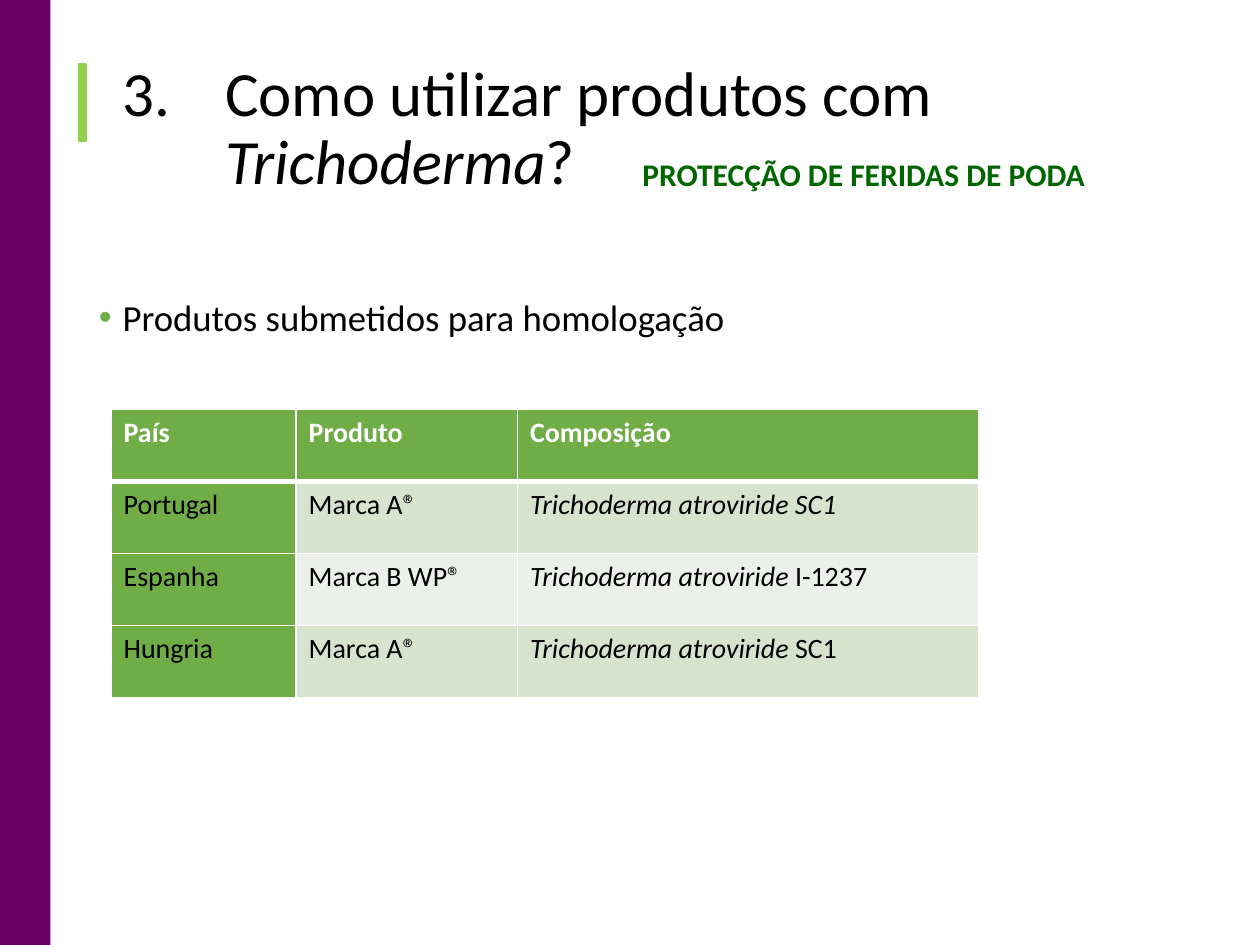
import pptx
import pptx.util
import pptx.dml.color
import pptx.enum.shapes
import pptx.enum.text
import pptx.oxml
import pptx.oxml.ns

Pt = pptx.util.Pt
RGBColor = pptx.dml.color.RGBColor
Anchor = pptx.enum.text.MSO_ANCHOR

PURPLE = RGBColor(0x66, 0x00, 0x66)
LIME = RGBColor(0x92, 0xD0, 0x50)
GREEN = RGBColor(0x70, 0xAD, 0x47)
DARK_GREEN = RGBColor(0x00, 0x66, 0x00)
BAND_DARK = RGBColor(0xD5, 0xE3, 0xCF)
BAND_LIGHT = RGBColor(0xEB, 0xF1, 0xE9)
WHITE = RGBColor(0xFF, 0xFF, 0xFF)
BLACK = RGBColor(0x00, 0x00, 0x00)


def add_xml(parent, tag, content="", **attributes):
    """Append a DrawingML element with the given attributes and inner XML."""
    listed = "".join(f' {name}="{value}"' for name, value in attributes.items())
    namespace = pptx.oxml.ns.nsdecls("a")
    parent.append(pptx.oxml.parse_xml(f"<a:{tag} {namespace}{listed}>{content}</a:{tag}>"))


class SlideBuilder:
    font_name = "Calibri"

    def __init__(self, slide):
        self.slide = slide

    def bar(self, left, top, width, height, color, line_width=0):
        shape = self.slide.shapes.add_shape(
            pptx.enum.shapes.MSO_SHAPE.RECTANGLE, Pt(left), Pt(top), Pt(width), Pt(height))
        shape.shadow.inherit = False
        shape.fill.solid()
        shape.fill.fore_color.rgb = color
        if line_width:
            shape.line.color.rgb = color
            shape.line.width = Pt(line_width)
        else:
            shape.line.fill.background()

    def runs(self, paragraph, pieces, size, color, bold=False):
        """Add (text, italic) pieces to a paragraph."""
        for text, italic in pieces:
            run = paragraph.add_run()
            run.text = text
            run.font.name = self.font_name
            run.font.size = Pt(size)
            run.font.color.rgb = color
            run.font.bold = bold
            run.font.italic = italic

    def text(self, left, top, width, height, pieces, size, color=BLACK, bold=False,
             anchor=Anchor.TOP, line_spacing=None):
        box = self.slide.shapes.add_textbox(Pt(left), Pt(top), Pt(width), Pt(height))
        box.text_frame.word_wrap = True
        box.text_frame.vertical_anchor = anchor
        paragraph = box.text_frame.paragraphs[0]
        if line_spacing:
            paragraph.line_spacing = line_spacing
        self.runs(paragraph, pieces, size, color, bold)
        return paragraph

    def hang(self, paragraph, indent):
        """Give a paragraph a hanging indent and return its properties element."""
        properties = paragraph._p.get_or_add_pPr()
        properties.set("marL", str(Pt(indent)))
        properties.set("indent", str(-Pt(indent)))
        return properties

    def numbered(self, paragraph, indent, start):
        add_xml(self.hang(paragraph, indent), "buAutoNum", type="arabicPeriod", startAt=start)

    def bulleted(self, paragraph, indent, color):
        properties = self.hang(paragraph, indent)
        add_xml(properties, "buClr", f'<a:srgbClr val="{color}"/>')
        add_xml(properties, "buFont", typeface="Arial")
        add_xml(properties, "buChar", char="•")

    def cell(self, cell, pieces, fill, color, bold, bottom_width):
        self.runs(cell.text_frame.paragraphs[0], pieces, 16, color, bold)
        properties = cell._tc.get_or_add_tcPr()
        for side in "LRTB":
            width = bottom_width if side == "B" else 1
            add_xml(properties, f"ln{side}",
                    f'<a:solidFill><a:srgbClr val="{WHITE}"/></a:solidFill>', w=Pt(width))
        cell.fill.solid()
        cell.fill.fore_color.rgb = fill

    def table(self, left, top, column_widths, row_height, rows):
        table = self.slide.shapes.add_table(
            len(rows), len(column_widths), Pt(left), Pt(top),
            Pt(sum(column_widths)), Pt(row_height * len(rows))).table
        for column, width in zip(table.columns, column_widths):
            column.width = Pt(width)
        for row_index, row in enumerate(rows):
            table.rows[row_index].height = Pt(row_height)
            header = row_index == 0
            band = BAND_DARK if row_index % 2 else BAND_LIGHT
            for column_index, pieces in enumerate(row):
                self.cell(table.cell(row_index, column_index), pieces,
                          GREEN if header or column_index == 0 else band,
                          WHITE if header else BLACK, header, 3 if header else 1)


def plain(text):
    return [(text, False)]


def main():
    presentation = pptx.Presentation()
    presentation.slide_width = Pt(720)
    presentation.slide_height = Pt(540)
    builder = SlideBuilder(presentation.slides.add_slide(presentation.slide_layouts[6]))

    builder.bar(0, 0, 28.8, 540, PURPLE)
    title = builder.text(
        63, 59, 607, 73.5,
        [("Como utilizar produtos com ", False), ("Trichoderma", True), ("?", False)],
        36, anchor=Anchor.MIDDLE, line_spacing=0.9)
    title.add_line_break()
    title.font.size = Pt(36)
    builder.numbered(title, 58.5, 3)
    subject = builder.text(49.5, 167.5, 621, 299.5,
                           plain("Produtos submetidos para homologação"), 21, line_spacing=0.9)
    builder.bulleted(subject, 13.5, GREEN)
    builder.bar(45, 36.75, 4.3, 43.75, LIME, line_width=1)

    species = ("Trichoderma atroviride", True)
    builder.table(63.5, 234, [105.75, 126.5, 263.75], 41.2, [
        [plain("País"), plain("Produto"), plain("Composição")],
        [plain("Portugal"), plain("Marca A®"), [("Trichoderma atroviride SC1", True)]],
        [plain("Espanha"), plain("Marca B WP®"), [species, (" I-1237", False)]],
        [plain("Hungria"), plain("Marca A®"), [species, (" SC1", False)]],
    ])
    builder.text(360, 85, 276.5, 29, plain("PROTECÇÃO DE FERIDAS DE PODA"),
                 18, DARK_GREEN, bold=True)
    presentation.save("out.pptx")


if __name__ == "__main__":
    main()
